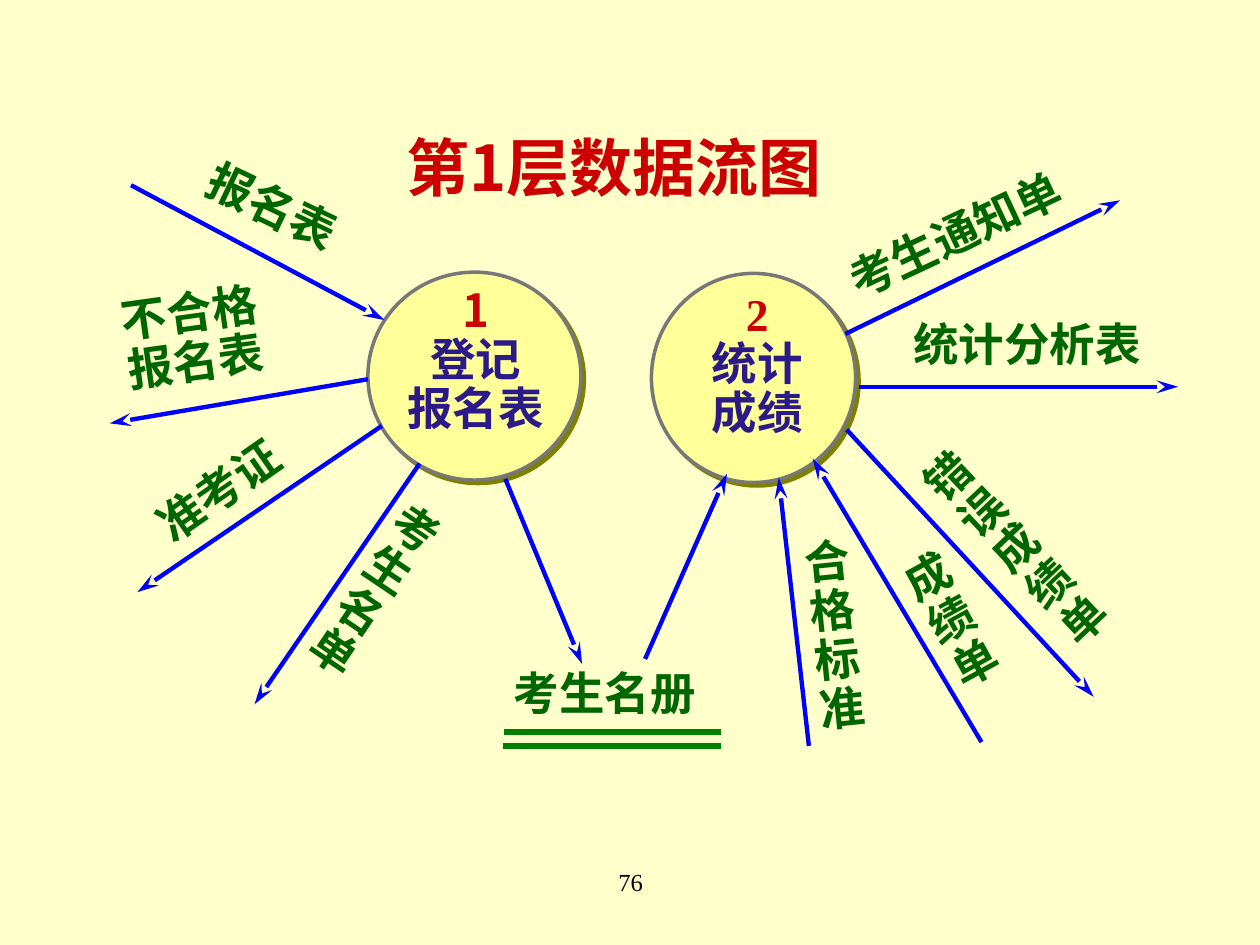
from typing import NamedTuple

from lxml.etree import SubElement
from pptx import Presentation
from pptx.dml.color import RGBColor
from pptx.enum.shapes import MSO_CONNECTOR as Connector, MSO_SHAPE as Shape
from pptx.enum.text import MSO_AUTO_SIZE as AutoSize, PP_ALIGN as Align
from pptx.oxml.ns import qn
from pptx.util import Emu, Pt

EMU_PER_PX = 9144  # 100 px to the inch
SANS = "Noto Sans CJK SC"
TITLE_FONT = "Noto Sans CJK JP"
SERIF = "Times New Roman"
RED, GREEN, INDIGO, BLUE = "CC0000", "006600", "2C1A88", "0000FF"


class Area(NamedTuple):
    left: int
    top: int
    width: int
    height: int


class Line(NamedTuple):
    x1: int
    y1: int
    x2: int
    y2: int


class Label(NamedTuple):
    area: Area
    lines: tuple[str, ...]
    rotation: float = 0
    spacing: float = 1
    wrap: bool = True


class Process(NamedTuple):
    circle: Area
    text_area: Area
    number: str
    number_font: str
    name: tuple[str, ...]


FLOWS = [
    Line(104, 147, 305, 254),
    Line(292, 301, 87, 336),
    Line(303, 338, 109, 470),
    Line(333, 368, 202, 559),
    Line(401, 380, 462, 527),
    Line(512, 523, 577, 376),
    Line(671, 265, 889, 159),
    Line(682, 307, 935, 307),
    Line(672, 341, 868, 553),
    Line(779, 589, 645, 364),
    Line(642, 592, 618, 379),
]
STORE_RULES = [Line(400, 581, 572, 581), Line(399, 592, 572, 592)]
PROCESSES = [
    Process(Area(292, 216, 169, 165), Area(297, 224, 161, 127), "1", SANS, ("登记", "报名表")),
    Process(Area(517, 217, 162, 166), Area(541, 227, 120, 127), "2", SERIF, ("统计", "成绩")),
]
LABELS = [
    Label(Area(152, 140, 143, 53), ("报名表",), 25.5),
    Label(Area(89, 224, 146, 88), ("不合格", "报名表"), 352.1, 0.9),
    Label(Area(107, 355, 152, 53), ("准考证",), 325.1),
    Label(Area(268, 389, 62, 166), ("考生名", "单"), 34.1, 0.9),
    Label(Area(398, 523, 165, 53), ("考生名册",), wrap=False),
    Label(Area(657, 155, 219, 53), ("考生通知单",), 334.9),
    Label(Area(715, 246, 274, 54), ("统计分析表",)),
    Label(Area(779, 332, 61, 205), ("错误成绩单",), 316.7, 0.9),
    Label(Area(728, 429, 61, 127), ("成绩单",), 331.2, 0.9),
    Label(Area(635, 422, 72, 166), tuple("合格标准"), 354.2, 0.9),
]


def px(*lengths: int) -> list[Emu]:
    return [Emu(length * EMU_PER_PX) for length in lengths]


def rgb(colour: str) -> RGBColor:
    return RGBColor.from_string(colour)


def add_text(page, area: Area, lines, *, colours=(GREEN,), fonts=(SANS,), size=26,
             bold=True, align=Align.LEFT, spacing=1.0, rotation=0.0, wrap=True):
    """Each line is a paragraph; the last colour and font serve the remaining lines."""
    box = page.shapes.add_textbox(*px(*area))
    box.rotation = rotation
    frame = box.text_frame
    frame.word_wrap = wrap
    frame.auto_size = AutoSize.SHAPE_TO_FIT_TEXT
    for index, line in enumerate(lines):
        para = frame.add_paragraph() if index else frame.paragraphs[0]
        para.alignment = align
        para.line_spacing = spacing
        span = para.add_run()
        span.text = line
        font_name = fonts[min(index, len(fonts) - 1)]
        span.font.name = font_name
        span.font.size = Pt(size)
        span.font.bold = bold
        span.font.color.rgb = rgb(colours[min(index, len(colours) - 1)])
        SubElement(span._r.get_or_add_rPr(), qn("a:ea"), typeface=font_name)


def add_line(page, line: Line, colour: str, width: float, arrow: bool = False):
    connector = page.shapes.add_connector(Connector.STRAIGHT, *px(*line))
    connector.line.color.rgb = rgb(colour)
    connector.line.width = Pt(width)
    if arrow:
        SubElement(connector.line._get_or_add_ln(), qn("a:tailEnd"),
                   type="stealth", w="med", len="lg")
    SubElement(connector._element.spPr, qn("a:effectLst"))


def add_process(page, process: Process):
    circle = page.shapes.add_shape(Shape.OVAL, *px(*process.circle))
    circle.fill.solid()
    circle.fill.fore_color.rgb = rgb("FFFF99")
    circle.line.color.rgb = rgb("777777")
    circle.line.width = Pt(2)
    circle.shadow.inherit = False
    effects = circle._element.spPr.find(qn("a:effectLst"))
    shadow = SubElement(effects, qn("a:outerShdw"), blurRad="0", dist=str(Pt(2.8)),
                        dir=str(45 * 60000), algn="ctr", rotWithShape="0")
    SubElement(shadow, qn("a:srgbClr"), val="808000")
    add_text(page, process.text_area, (process.number, *process.name),
             colours=(RED, INDIGO), fonts=(process.number_font, SANS),
             align=Align.CENTER, spacing=0.9)


def main():
    deck = Presentation()
    deck.slide_width, deck.slide_height = px(1000, 750)
    page = deck.slides.add_slide(deck.slide_layouts[6])
    page.background.fill.solid()
    page.background.fill.fore_color.rgb = rgb("FFFFCC")

    add_text(page, Area(254, 97, 467, 70), ("第1层数据流图",), colours=(RED,),
             fonts=(TITLE_FONT,), size=36, align=Align.CENTER)
    for process in PROCESSES:
        add_process(page, process)
    for flow in FLOWS:
        add_line(page, flow, BLUE, 2.5, arrow=True)
    for rule in STORE_RULES:
        add_line(page, rule, "008000", 3)
    for label in LABELS:
        add_text(page, label.area, label.lines, rotation=label.rotation,
                 spacing=label.spacing, wrap=label.wrap)
    add_text(page, Area(342, 683, 317, 50), ("76",), colours=("000000",),
             fonts=(SERIF,), size=14, bold=False, align=Align.CENTER)
    deck.save("out.pptx")


if __name__ == "__main__":
    main()
